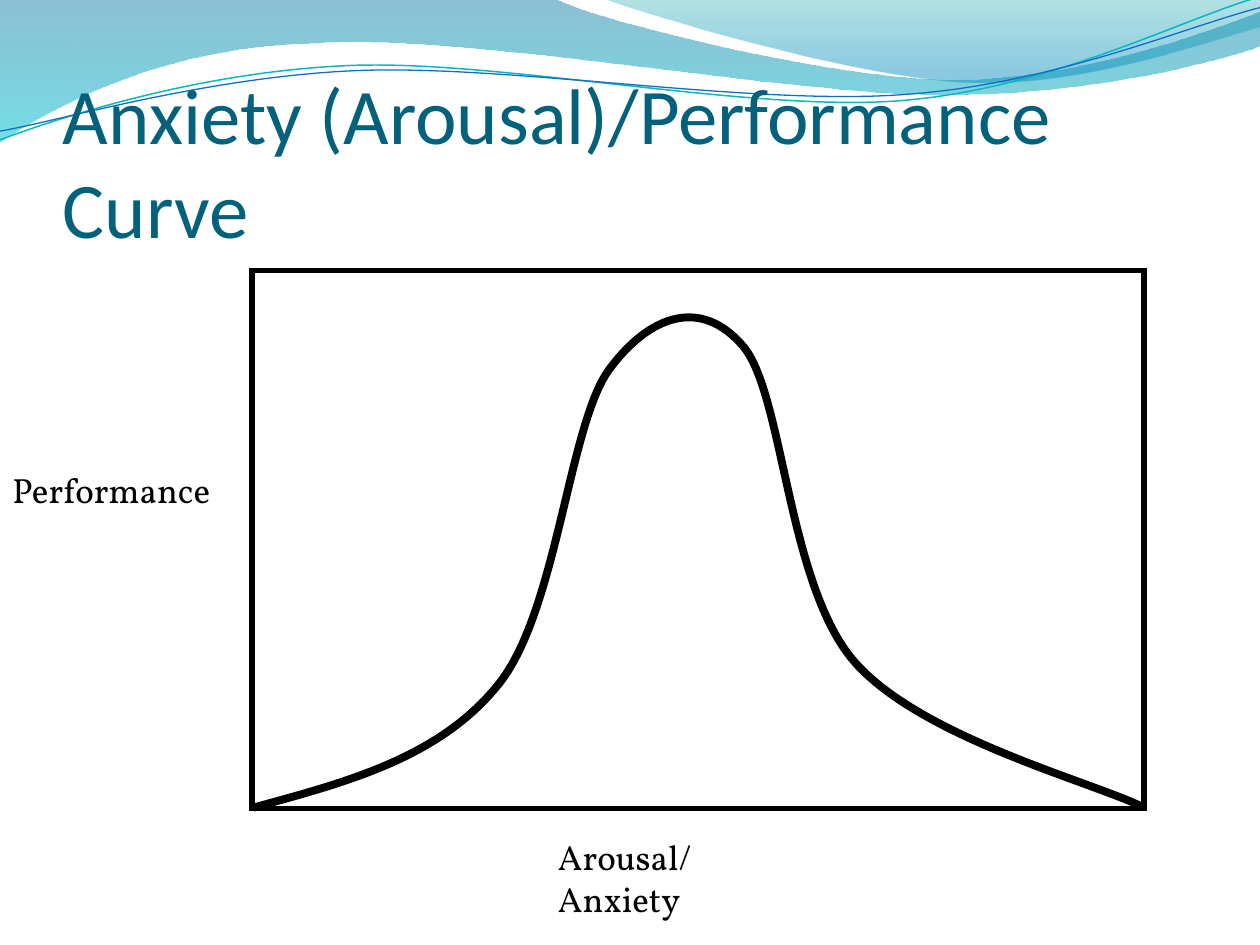
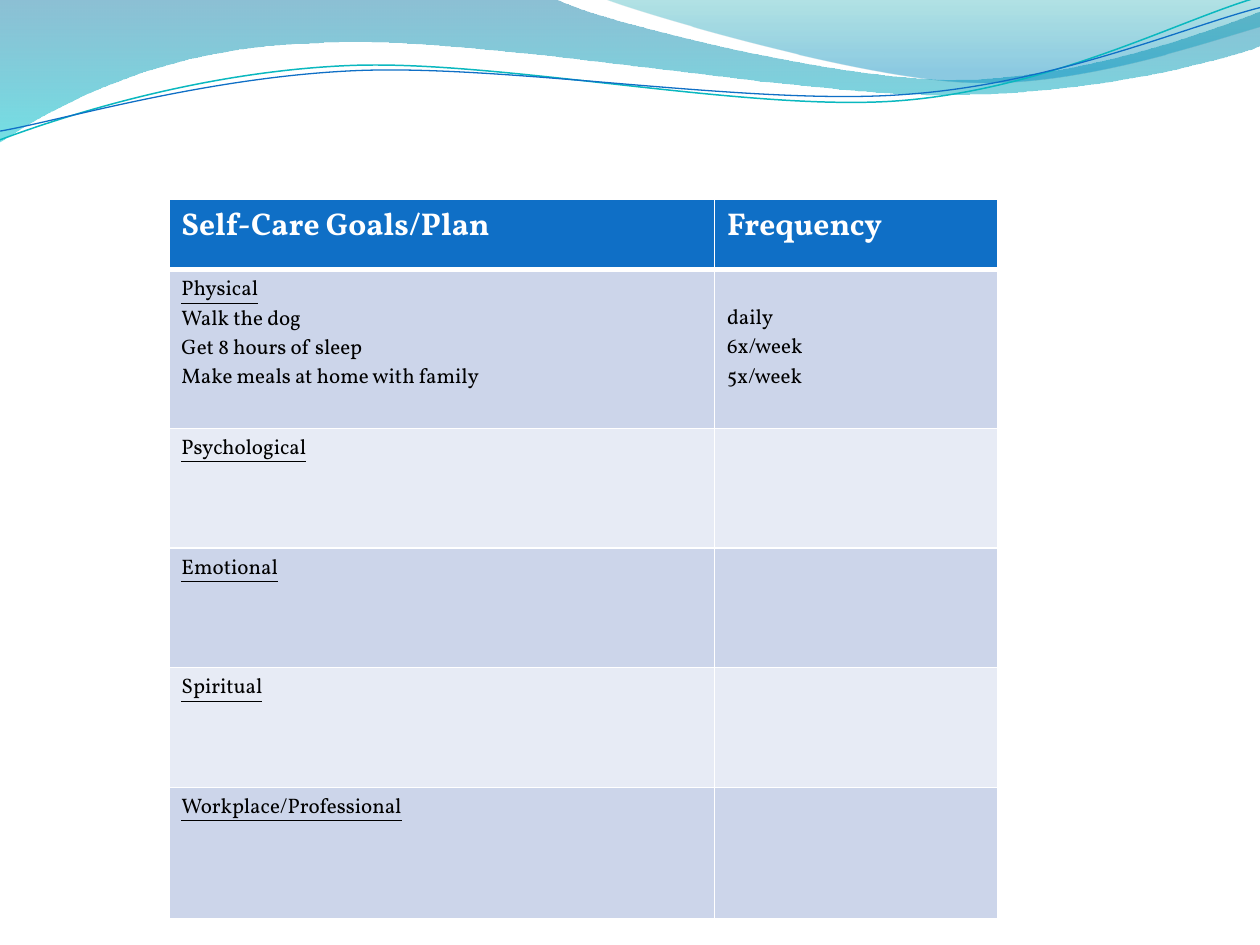
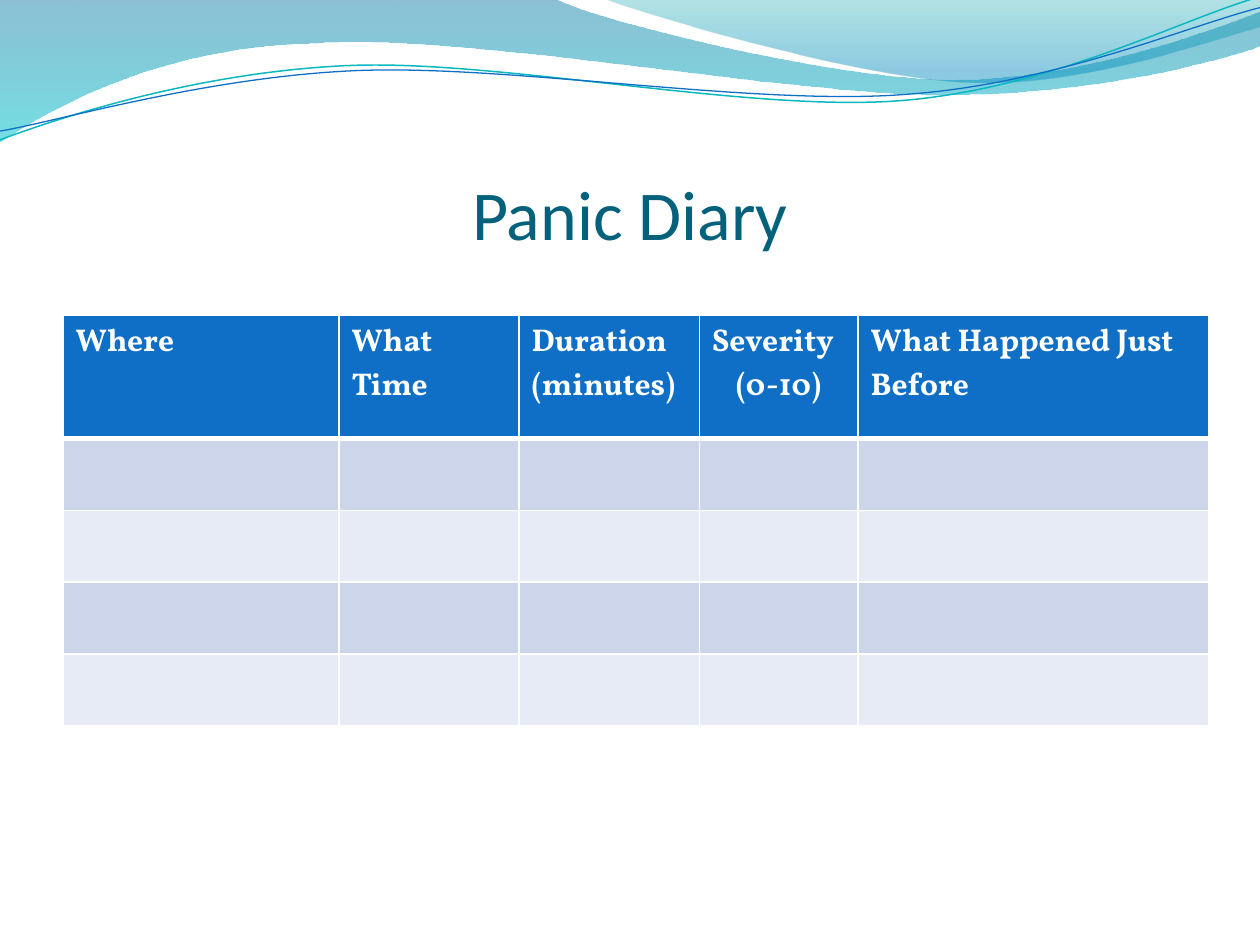
from math import cos, radians, sin

from pptx import Presentation
from pptx.dml.color import RGBColor
from pptx.enum.shapes import MSO_CONNECTOR as Conn, MSO_SHAPE as Kind
from pptx.enum.text import MSO_ANCHOR as Anchor, PP_ALIGN as Align
from pptx.oxml.ns import qn
from pptx.util import Pt
from lxml.etree import SubElement as sub

PX = 9144  # EMU per px, 100 px to the inch

# Shared look
HEAD, BODY = "Calibri", "Vollkorn"
BLACK, WHITE = "000000", "FFFFFF"
BLUE, TEAL, INK = "0F6FC6", "0AB8BF", "04617B"
BANDS = "CCD5EA", "E7EBF5"
TILT = -2.7  # degrees, for the thin waves

# Outlines: a start, then lines (x, y) or curves (three points in a row)
SWEEP = [(0, 0), (440, -1), (476, 17, 664, 63, 758, 63),
         (853, 63, 958, 26, 1000, 9), (1001, 36),
         (983, 44, 870, 76, 746, 75), (622, 75, 382, 28, 257, 34),
         (129, 36, 46, 83, -1, 113)]
CREST = [(479, -1), (509, 11, 682, 62, 769, 65),
         (856, 69, 961, 32, 1000, 21), (1000, 0)]
# Color, width, middle, outline
WAVES = [
    (TEAL, 0.85, (499, 57),
     [(0, 111), (48, 93, 158, 57, 277, 52),
      (395, 47, 593, 89, 713, 80), (833, 71, 938, 15, 998, -2)]),
    (BLUE, 0.75, (499, 59),
     [(0, 104), (47, 96, 164, 61, 283, 56),
      (403, 51, 597, 84, 717, 75), (836, 67, 941, 21, 1000, 6)]),
]
BELL = [(201, 641), (274, 621, 348, 602, 395, 544),
        (442, 487, 451, 339, 483, 294), (516, 249, 557, 236, 590, 275),
        (622, 313, 625, 464, 678, 525), (731, 586, 869, 621, 908, 641)]


def rgb(code):
    return RGBColor.from_string(code)


def emu(*sizes):
    return [round(size * PX) for size in sizes]


def pairs(seg):
    return list(zip(seg[::2], seg[1::2]))


def level(track, mid):
    """Take the tilt out of an outline, about its middle."""
    c, s = cos(radians(-TILT)), sin(radians(-TILT))
    flat = []
    for seg in track:
        dots = [(x - mid[0], y - mid[1]) for x, y in pairs(seg)]
        flat.append([n for x, y in dots
                     for n in (mid[0] + x * c - y * s, mid[1] + x * s + y * c)])
    return flat


class Deck:
    def __init__(self):
        self.prs = Presentation()
        self.prs.slide_width, self.prs.slide_height = emu(1000, 750)
        self.shapes = None

    def slide(self):
        page = self.prs.slides.add_slide(self.prs.slide_layouts[6])
        self.shapes = page.shapes
        self.fade(SWEEP, [(0, "0074A1", 45), (1, "00C6CF", 55)])
        self.fade(CREST, [(0, "00A1A9", 30), (0.8, "008BBF", 45)])
        for color, width, mid, track in WAVES:
            wave = self.curve(level(track, mid), color, width)
            wave.rotation = TILT

    def free(self, track, close):
        dots = [emu(*dot) for seg in track for dot in pairs(seg)]
        pen = self.shapes.build_freeform(*dots[0], scale=1.0)
        pen.add_line_segments(dots[1:], close=close)
        shape = pen.convert_to_shape()
        shape.shadow.inherit = False
        # Join each three points of a curve into one bezier
        nodes = iter(list(shape.element.spPr.iter(qn("a:lnTo"))))
        for seg in track[1:]:
            trio = [next(nodes) for dot in pairs(seg)]
            if len(trio) == 3:
                trio[0].addprevious(bend := sub(trio[0].getparent(), qn("a:cubicBezTo")))
                for node in trio:
                    bend.append(node[0])
                    node.getparent().remove(node)
        return shape

    def fade(self, track, stops):
        shape = self.free(track, True)
        shape.line.fill.background()
        shape.fill.gradient()
        shape.fill.gradient_angle = 270
        for stop, (spot, color, alpha) in zip(shape.fill.gradient_stops, stops):
            stop.position = spot
            stop.color.rgb = rgb(color)
        marks = shape.element.spPr.iter(qn("a:srgbClr"))
        for mark, (spot, color, alpha) in zip(list(marks), stops):
            sub(mark, qn("a:alpha")).set("val", str(alpha * 1000))

    def stroke(self, shape, color, width):
        shape.line.color.rgb = rgb(color)
        shape.line.width = Pt(width)

    def curve(self, track, color, width):
        shape = self.free(track, False)
        shape.fill.background()
        self.stroke(shape, color, width)
        return shape

    def frame(self, box, color, width):
        shape = self.shapes.add_shape(Kind.RECTANGLE, *emu(*box))
        shape.shadow.inherit = False
        shape.fill.background()
        self.stroke(shape, color, width)
        edge = shape.element.spPr.find(qn("a:ln"))
        sub(edge, qn("a:miter")).set("lim", "800000")

    def line(self, ends, color, width):
        shape = self.shapes.add_connector(Conn.STRAIGHT, *emu(*ends))
        self.stroke(shape, color, width)
        sub(shape.element.spPr, qn("a:effectLst"))

    def style(self, para, font, size, color, bold=False, under=False):
        for run in para.runs:
            run.font.name, run.font.size = font, Pt(size)
            run.font.color.rgb = rgb(color)
            run.font.bold, run.font.underline = bold, under

    def text(self, words, box, font=BODY, size=20, color=BLACK):
        frame = self.shapes.add_textbox(*emu(*box)).text_frame
        frame.word_wrap = True
        frame.text = words
        self.style(frame.paragraphs[0], font, size, color)
        return frame

    def title(self, words, size, align=Align.LEFT):
        frame = self.text(words, (50, 77, 900, 125), HEAD, size, INK)
        frame.vertical_anchor = Anchor.BOTTOM
        frame.margin_left = frame.margin_right = frame.margin_bottom = 0
        frame.paragraphs[0].alignment = align

    def edges(self, cell, top):
        tag = cell._tc.get_or_add_tcPr()
        for side in "LRTB":
            width = 3 if top and side == "B" else 1
            edge = sub(tag, qn("a:ln" + side), w=str(Pt(width)))
            fill = sub(edge, qn("a:solidFill"))
            sub(fill, qn("a:srgbClr"), val=WHITE)

    def table(self, spot, cols, rows, data):
        size = sum(cols), sum(rows)
        grid = self.shapes.add_table(len(rows), len(cols), *emu(*spot, *size)).table
        for col, width in zip(grid.columns, emu(*cols)):
            col.width = width
        for r, (row, height) in enumerate(zip(grid.rows, emu(*rows))):
            row.height = height
            for c, cell in enumerate(row.cells):
                self.edges(cell, r == 0)
                cell.text = data[r][c]
                cell.fill.solid()
                cell.fill.fore_color.rgb = rgb(BANDS[(r - 1) % 2] if r else BLUE)
                for n, para in enumerate(cell.text_frame.paragraphs):
                    if r:
                        self.style(para, BODY, 12, BLACK, under=c == n == 0)
                    else:
                        self.style(para, BODY, 18, WHITE, bold=True)
        return grid


def main():
    deck = Deck()

    # Curve
    deck.slide()
    deck.title("Anxiety (Arousal)/Performance Curve", 45)
    deck.frame((200, 215, 708, 427), BLACK, 3)
    deck.line((201, 216, 201, 641), BLACK, 0.75)
    deck.line((201, 641, 908, 641), BLACK, 0.75)
    deck.curve(BELL, BLACK, 4.5)
    deck.text("Performance", (0, 367, 186, 43))
    deck.text("Arousal/ Anxiety", (433, 658, 221, 43))

    # Goals
    deck.slide()
    goals = "Physical\nWalk the dog\nGet 8 hours of sleep\nMake meals at home with family"
    areas = ["Psychological", "Emotional", "Spiritual", "Workplace/Professional"]
    plan = deck.table((134, 158), [433, 225], [56, 126, 95, 95, 95, 104], [
        ("Self-Care Goals/Plan", "Frequency"),
        (goals, "daily\n6x/week\n5x/week"),
        *[(area, "") for area in areas]])
    plan.cell(1, 1).margin_top = emu(28)[0]  # level with the first goal

    # Diary
    deck.slide()
    deck.title("Panic Diary", 40, Align.CENTER)
    heads = ["Where", "What Time", "Duration (minutes)", "Severity (0-10)",
             "What Happened Just Before"]
    diary = deck.table((50, 250), [219, 143, 143, 126, 278], [98] + [57] * 4,
                       [heads] + [[""] * 5] * 4)
    hang = emu(19)[0]  # indent of the wrapped line
    para = diary.cell(0, 3).text_frame.paragraphs[0]
    tag = para._p.get_or_add_pPr()
    tag.set("marL", str(hang))
    tag.set("indent", str(-hang))

    deck.prs.save("out.pptx")


if __name__ == "__main__":
    main()
